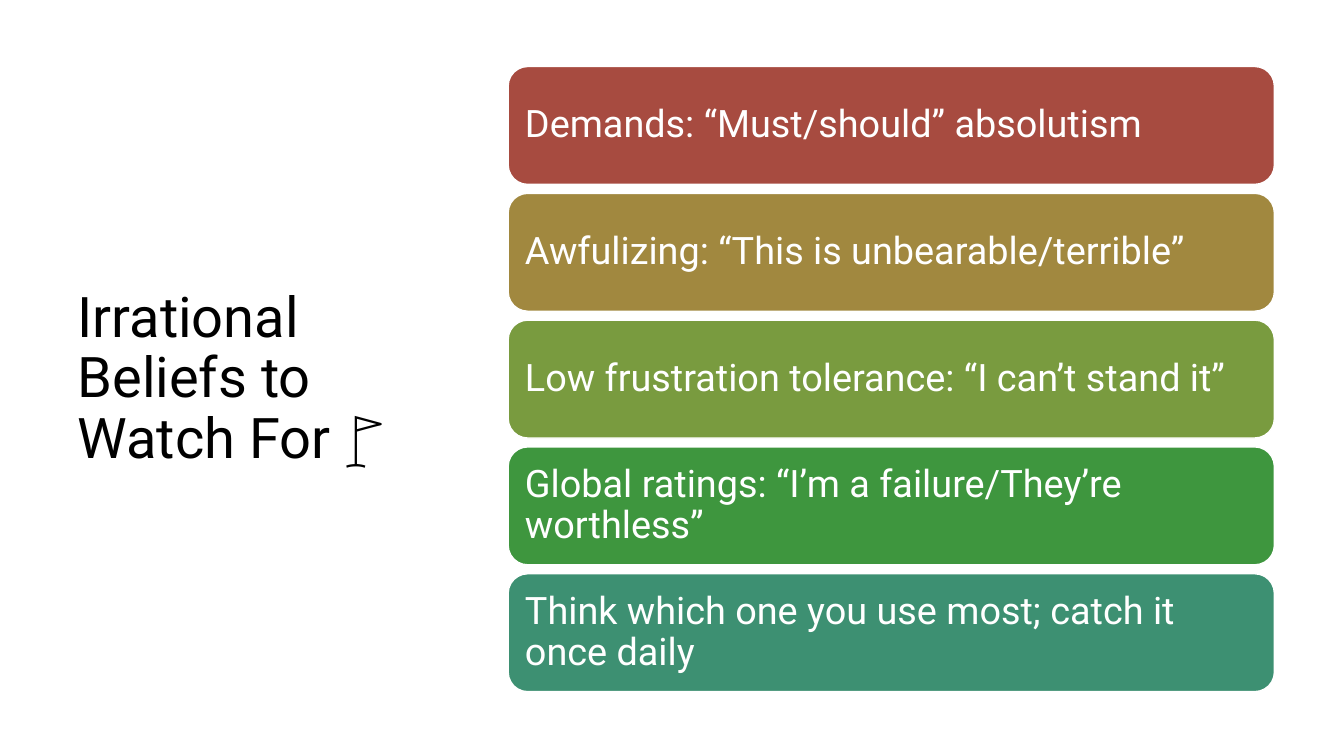
from pptx import Presentation
from pptx import util as u
from pptx.dml.color import RGBColor
from pptx.enum import shapes, text

THEME = {
    "font": "Roboto",
    "title_size": 40,
    "belief_size": 27,
    "title_color": "000000",
    "light": "FFFFFF",
}
BELIEFS = [
    ("Demands: “Must/should” absolutism", "A74B40"),
    ("Awfulizing: “This is unbearable/terrible”", "A1883F"),
    ("Low frustration tolerance: “I can’t stand it”", "799B3F"),
    ("Global ratings: “I’m a failure/They’re worthless”", "3E963E"),
    ("Think which one you use most; catch it once daily", "3D9072"),
]
LEFT, TOP, WIDTH, HEIGHT, PITCH = 5.04, 0.66, 7.6, 1.17, 1.258


def write(tf, words, size, color):
    tf.text = words
    tf.word_wrap = True
    tf.auto_size = text.MSO_AUTO_SIZE.NONE
    tf.vertical_anchor = text.MSO_ANCHOR.MIDDLE
    p = tf.paragraphs[0]
    p.alignment = text.PP_ALIGN.LEFT
    p.line_spacing = 0.9
    font = p.runs[0].font
    font.name = THEME["font"]
    font.size = u.Pt(size)
    font.color.rgb = RGBColor.from_string(color)


prs = Presentation()
prs.slide_width, prs.slide_height = u.Inches(13.33), u.Inches(7.5)
s = prs.slides.add_slide(prs.slide_layouts[5])

title = s.shapes.title
title.left, title.top = u.Inches(0.67), u.Inches(0.6)
title.width, title.height = u.Inches(3.82), u.Inches(6.33)
write(title.text_frame, "Irrational Beliefs to Watch For 🚩",
      THEME["title_size"], THEME["title_color"])

for row, (words, color) in enumerate(BELIEFS):
    sp = s.shapes.add_shape(
        shapes.MSO_SHAPE.ROUNDED_RECTANGLE,
        u.Inches(LEFT), u.Inches(TOP + row * PITCH),
        u.Inches(WIDTH), u.Inches(HEIGHT))
    sp.shadow.inherit = False
    sp.fill.solid()
    sp.fill.fore_color.rgb = RGBColor.from_string(color)
    sp.line.color.rgb = RGBColor.from_string(THEME["light"])
    sp.line.width = u.Pt(1)
    tf = sp.text_frame
    tf.margin_left = tf.margin_right = u.Inches(0.11)
    tf.margin_top = tf.margin_bottom = u.Inches(0.11)
    write(tf, words, THEME["belief_size"], THEME["light"])

prs.save("out.pptx")
